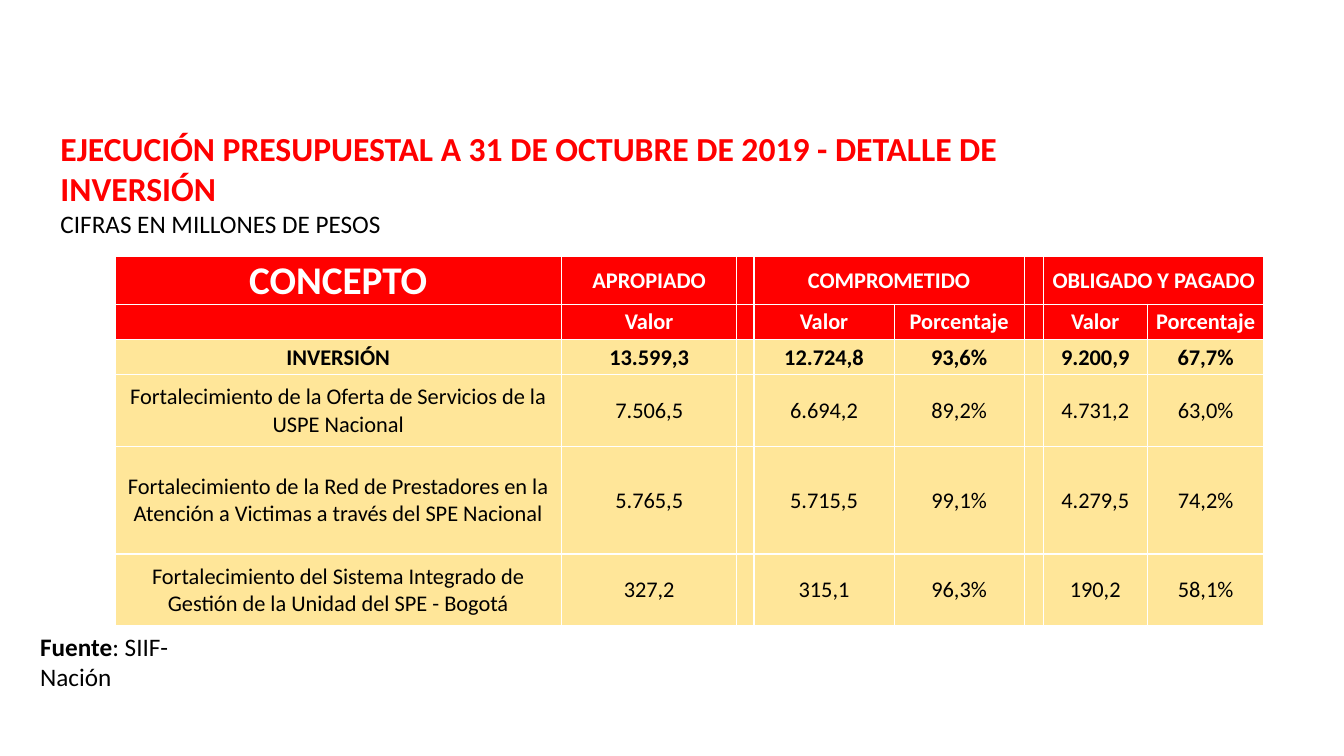
from lxml.etree import SubElement
from pptx import Presentation
from pptx.dml.color import RGBColor
from pptx.enum.text import MSO_ANCHOR as Anchor, MSO_AUTO_SIZE as AutoSize, PP_ALIGN as Align
from pptx.oxml.ns import qn
from pptx.util import Pt

RED = RGBColor(0xFF, 0x00, 0x00)
CREAM = RGBColor(0xFF, 0xE6, 0x99)
WHITE = RGBColor(0xFF, 0xFF, 0xFF)
BLACK = RGBColor(0x00, 0x00, 0x00)

COLUMN_WIDTHS = [319, 125.3, 12.2, 100.1, 92.9, 13.7, 74.2, 83.5]
ROW_HEIGHTS = [34.3, 25.2, 25.2, 51.1, 77, 51.1]
HEADER_ROWS = 2
TOTAL_ROW = 2
MERGED_HEADINGS = [(3, 4), (6, 7)]
BUDGET = [
    ["CONCEPTO", "APROPIADO", "", "COMPROMETIDO", "", "", "OBLIGADO Y PAGADO", ""],
    ["", "Valor", "", "Valor", "Porcentaje", "", "Valor", "Porcentaje"],
    ["INVERSIÓN", "13.599,3", "", "12.724,8", "93,6%", "", "9.200,9", "67,7%"],
    ["Fortalecimiento de la Oferta de Servicios de la USPE Nacional",
     "7.506,5", "", "6.694,2", "89,2%", "", "4.731,2", "63,0%"],
    ["Fortalecimiento de la Red de Prestadores en la Atención a Victimas "
     "a través del SPE Nacional",
     "5.765,5", "", "5.715,5", "99,1%", "", "4.279,5", "74,2%"],
    ["Fortalecimiento del Sistema Integrado de Gestión de la Unidad del SPE - Bogotá",
     "327,2", "", "315,1", "96,3%", "", "190,2", "58,1%"],
]


def add_span(para, text, size, color, bold=False):
    span = para.add_run()
    span.text = text
    span.font.name = "Calibri"
    span.font.size = Pt(size)
    span.font.bold = bold
    span.font.color.rgb = color


def add_heading(page):
    title = page.shapes.title
    title.left, title.top, title.width, title.height = Pt(36), Pt(87.8), Pt(795), Pt(87.1)
    frame = title.text_frame
    frame.word_wrap = True
    frame.auto_size = AutoSize.SHAPE_TO_FIT_TEXT
    frame.vertical_anchor = Anchor.TOP
    heading, units = frame.paragraphs[0], frame.add_paragraph()
    heading.alignment = units.alignment = Align.LEFT
    add_span(heading, "EJECUCIÓN PRESUPUESTAL A 31 DE OCTUBRE DE 2019 - DETALLE DE INVERSIÓN",
             24, RED, bold=True)
    add_span(units, "CIFRAS EN MILLONES DE PESOS", 18, BLACK)


def add_borders(cell):
    properties = cell._tc.get_or_add_tcPr()
    for side in ("a:lnL", "a:lnR", "a:lnT", "a:lnB"):
        line = SubElement(properties, qn(side), w=str(Pt(1)))
        fill = SubElement(line, qn("a:solidFill"))
        SubElement(fill, qn("a:srgbClr"), val=str(WHITE))


def fill_cell(cell, text, row):
    is_header = row < HEADER_ROWS
    add_borders(cell)
    cell.fill.solid()
    cell.fill.fore_color.rgb = RED if is_header else CREAM
    cell.margin_left = cell.margin_right = cell.margin_top = Pt(0.7)
    cell.margin_bottom = Pt(0)
    cell.vertical_anchor = Anchor.MIDDLE
    if text:
        para = cell.text_frame.paragraphs[0]
        para.alignment = Align.CENTER
        add_span(para, text, 28 if text == "CONCEPTO" else 16,
                 WHITE if is_header else BLACK, bold=row <= TOTAL_ROW)


def add_budget_table(page):
    frame = page.shapes.add_table(len(ROW_HEIGHTS), len(COLUMN_WIDTHS), Pt(82.1), Pt(182.9),
                                  Pt(sum(COLUMN_WIDTHS)), Pt(sum(ROW_HEIGHTS)))
    table = frame.table
    table.first_row = table.horz_banding = False
    for column, width in zip(table.columns, COLUMN_WIDTHS):
        column.width = Pt(width)
    for table_row, height in zip(table.rows, ROW_HEIGHTS):
        table_row.height = Pt(height)
    for row, texts in enumerate(BUDGET):
        for column, text in enumerate(texts):
            fill_cell(table.cell(row, column), text, row)
    for first, last in MERGED_HEADINGS:
        table.cell(0, first).merge(table.cell(0, last))


def add_source_note(page):
    box = page.shapes.add_textbox(Pt(21.6), Pt(447.1), Pt(150), Pt(28.8))
    frame = box.text_frame
    frame.word_wrap = True
    frame.auto_size = AutoSize.SHAPE_TO_FIT_TEXT
    para = frame.paragraphs[0]
    add_span(para, "Fuente", 18, BLACK, bold=True)
    add_span(para, ": SIIF- Nación", 18, BLACK)


def main():
    deck = Presentation()
    deck.slide_width, deck.slide_height = Pt(960), Pt(540)
    # Title Only layout
    page = deck.slides.add_slide(deck.slide_layouts[5])

    # Heading, table and source
    add_heading(page)
    add_budget_table(page)
    add_source_note(page)
    deck.save("out.pptx")


if __name__ == "__main__":
    main()
